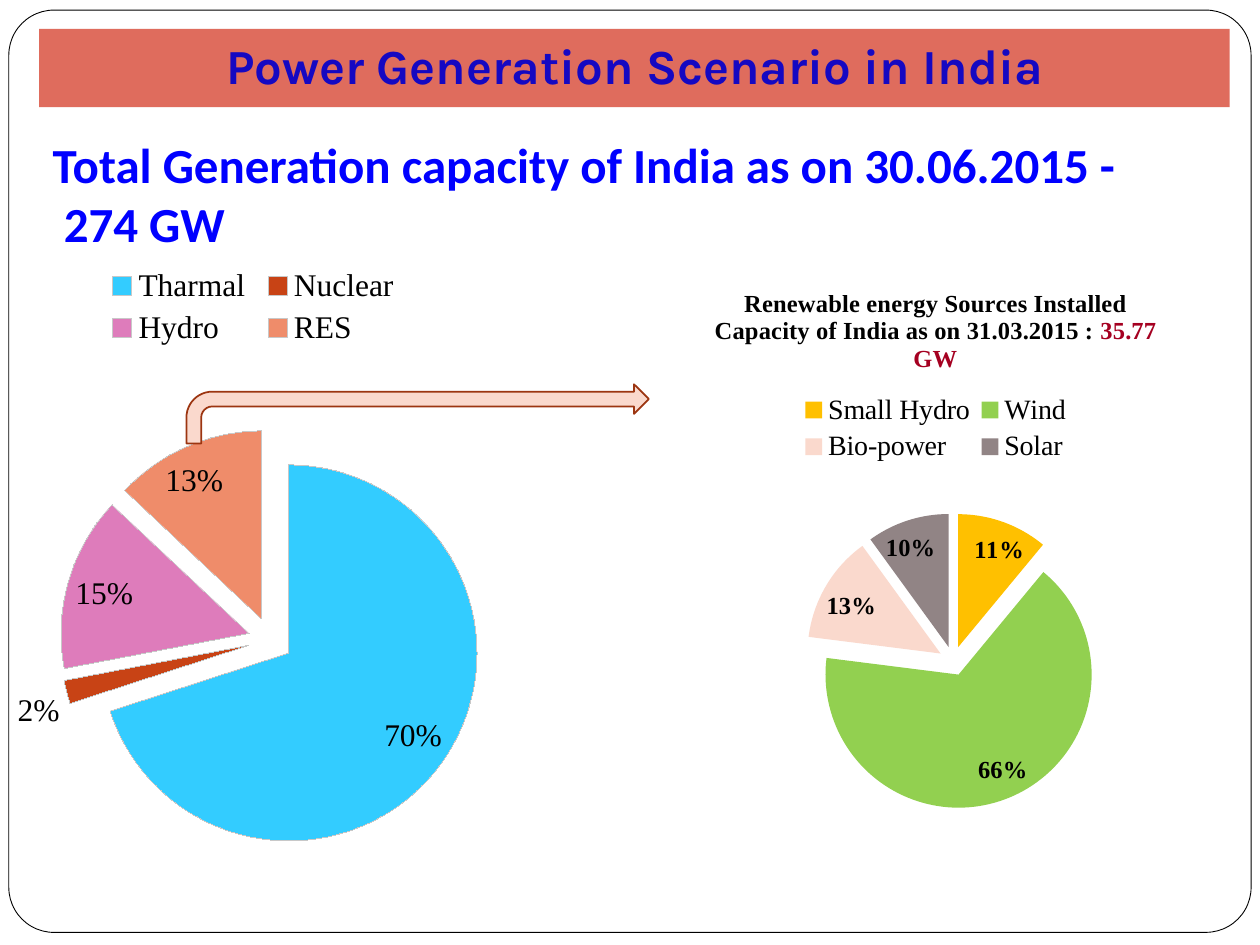
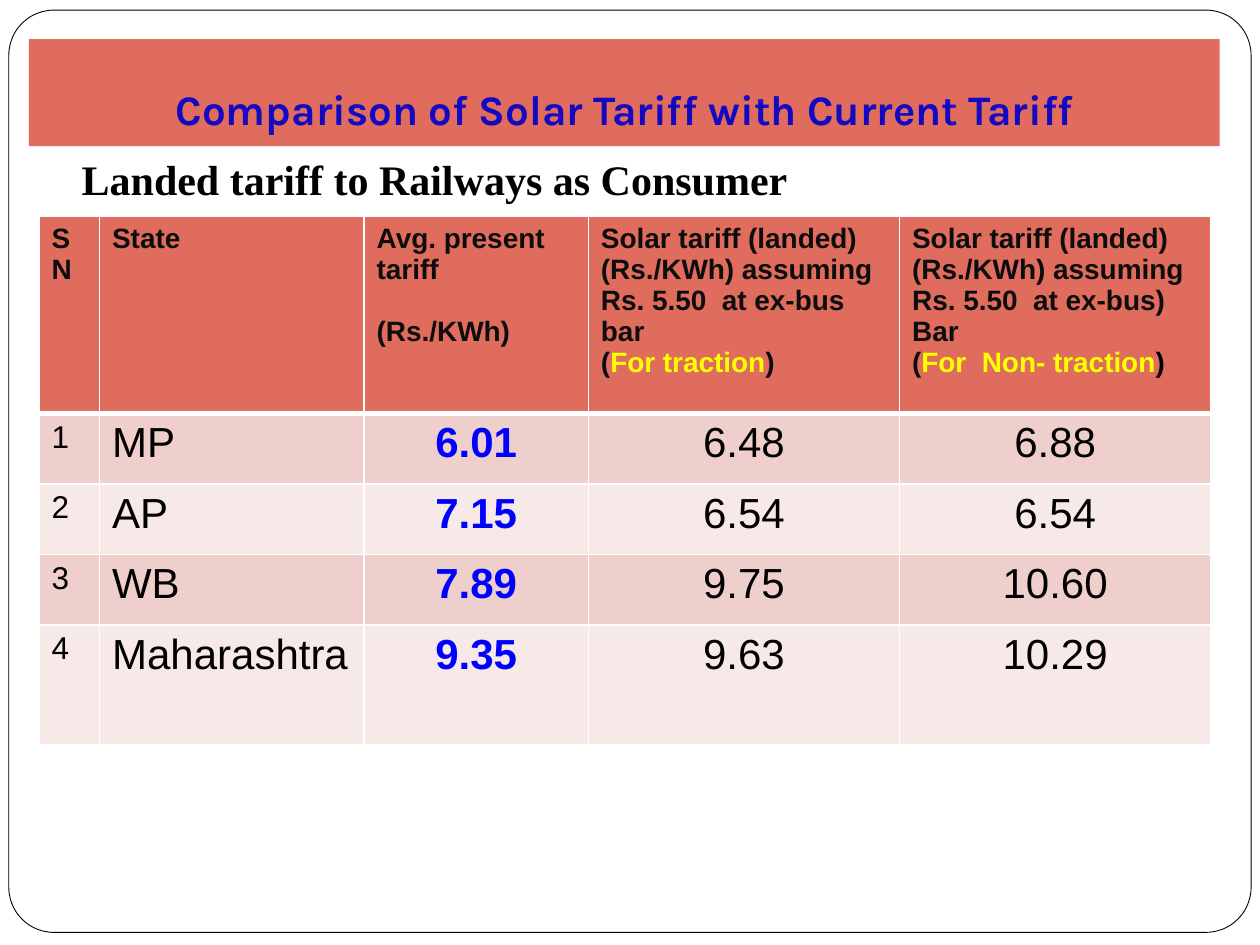
from lxml import etree
from pptx import Presentation
from pptx.chart.data import CategoryChartData
from pptx.dml.color import RGBColor
from pptx.enum.chart import XL_CHART_TYPE, XL_LABEL_POSITION as LABEL, XL_LEGEND_POSITION as LEGEND
from pptx.enum.shapes import MSO_SHAPE as SHAPE
from pptx.enum.text import MSO_ANCHOR as ANCHOR, PP_ALIGN as ALIGN
from pptx.oxml.ns import qn
from pptx.util import Inches, Pt

CORAL, TITLE_BLUE, BLUE = "DF6C5D", "1508C2", "0000FF"
BLACK, WHITE, INK, YELLOW, CRIMSON = "000000", "FFFFFF", "0D0D0D", "FFFF00", "A50021"
ROW_FILLS = ("EFCFCC", "F7E9E8")
SERIF = "Times New Roman"

TARIFF_HEAD = [
    ["SN"],
    ["State"],
    ["Avg. present tariff", "(Rs./KWh)"],
    ["Solar tariff (landed) (Rs./KWh) assuming Rs. 5.50  at ex-bus bar",
     ["(", ("For traction", YELLOW), ")"]],
    ["Solar tariff (landed) (Rs./KWh) assuming Rs. 5.50  at ex-bus)", "Bar",
     ["(", ("For  Non- traction", YELLOW), (")", BLACK)]],
]
TARIFFS = [
    ("1", "MP", "6.01", "6.48", "6.88"),
    ("2", "AP", "7.15", "6.54", "6.54"),
    ("3", "WB", "7.89", "9.75", "10.60"),
    ("4", "Maharashtra", "9.35", "9.63", "10.29"),
]


def rgb(color):
    return RGBColor.from_string(color)


def inches(box):
    return [Inches(length) for length in box]


def set_font(font, size, color=BLACK, name=SERIF, bold=False):
    font.size, font.name, font.bold = Pt(size), name, bold
    font.color.rgb = rgb(color)


def write(frame, paragraphs, size, color=BLACK, name=SERIF, bold=False,
          align=ALIGN.LEFT, before=0, indent=0):
    """Each paragraph is a string or a list of runs; a run may be (text, color)."""
    frame.word_wrap = True
    for number, runs in enumerate(paragraphs):
        paragraph = frame.add_paragraph() if number else frame.paragraphs[0]
        paragraph.alignment = align
        if before:
            paragraph.space_before = Pt(before)
        if indent:
            paragraph._p.get_or_add_pPr().set("marL", str(Inches(indent)))
        for item in [runs] if isinstance(runs, str) else runs:
            words, run_color = (item, color) if isinstance(item, str) else item
            for line_number, line in enumerate(words.split("\n")):
                if line_number:
                    paragraph.add_line_break()
                run = paragraph.add_run()
                run.text = line
                set_font(run.font, size, run_color, name, bold)


def add_text(slide, box, paragraphs, **text_format):
    write(slide.shapes.add_textbox(*inches(box)).text_frame, paragraphs, **text_format)


def add_box(slide, kind, box, fill, line=None, weight=1):
    shape = slide.shapes.add_shape(kind, *inches(box))
    shape.shadow.inherit = False
    shape.fill.solid()
    shape.fill.fore_color.rgb = rgb(fill)
    if line:
        shape.line.color.rgb = rgb(line)
        shape.line.width = Pt(weight)
    else:
        shape.line.fill.background()
    return shape


def add_framed_slide(deck):
    slide = deck.slides.add_slide(deck.slide_layouts[6])
    frame = add_box(slide, SHAPE.ROUNDED_RECTANGLE, (0.07, 0.08, 9.86, 7.32), WHITE, BLACK, 0.5)
    frame.adjustments[0] = 0.049
    return slide


def add_title_band(slide, box, title, size):
    band = add_box(slide, SHAPE.RECTANGLE, box, CORAL)
    frame = band.text_frame
    frame.vertical_anchor = ANCHOR.BOTTOM
    frame.margin_bottom = Inches(0.1)
    write(frame, [title], size=size, color=TITLE_BLUE, name="Karla", bold=True, align=ALIGN.CENTER)


def manual_layout(fractions, inner=False):
    """Chart layout element from x, y, width and height as shares of the chart."""
    layout = etree.Element(qn("c:layout"))
    manual = etree.SubElement(layout, qn("c:manualLayout"))
    settings = [("layoutTarget", "inner")] if inner else []
    settings += [("xMode", "edge"), ("yMode", "edge")]
    settings += zip("xywh", fractions)
    for tag, value in settings:
        etree.SubElement(manual, qn("c:" + tag)).set("val", str(value))
    return layout


def add_pie(slide, box, shares, explosion, plot_area, legend_area, legend_size,
            label_size, bold_labels=False, outline=None, title=None):
    """Shares are (category, percent, color) rows."""
    categories, values, colors = zip(*shares)
    data = CategoryChartData()
    data.categories = categories
    data.add_series("Series 1", values)
    chart = slide.shapes.add_chart(XL_CHART_TYPE.PIE, *inches(box), data).chart
    set_font(chart.font, label_size)

    # Title
    chart.has_title = bool(title)
    if title:
        write(chart.chart_title.text_frame, [title], size=14, bold=True, align=ALIGN.CENTER)

    # Slices
    pie = chart.plots[0]
    pie.vary_by_categories = True
    series = pie.series[0]
    for number, color in enumerate(colors):
        slice_format = series.points[number].format
        slice_format.fill.solid()
        slice_format.fill.fore_color.rgb = rgb(color)
        if outline:
            slice_format.line.color.rgb = rgb(outline)
        else:
            slice_format.line.fill.background()
    burst = etree.Element(qn("c:explosion"))
    burst.set("val", str(explosion))
    series._element.find(qn("c:dPt")).addprevious(burst)

    # Percent labels
    pie.has_data_labels = True
    labels = pie.data_labels
    labels.show_percentage, labels.show_value = True, False
    labels.number_format, labels.number_format_is_linked = "0%", False
    labels.position = LABEL.BEST_FIT
    set_font(labels.font, label_size, bold=bold_labels)

    # Legend and placement
    chart.has_legend = True
    legend = chart.legend
    legend.position, legend.include_in_layout = LEGEND.TOP, False
    set_font(legend.font, legend_size)
    for element in legend._element.findall(qn("c:layout")):
        legend._element.remove(element)
    legend._element.find(qn("c:legendPos")).addnext(manual_layout(legend_area))
    plot = pie._element.getparent()
    for element in plot.findall(qn("c:layout")):
        plot.remove(element)
    plot.insert(0, manual_layout(plot_area, inner=True))


def format_cell(cell, fill, bottom=1):
    for side, weight in (("L", 1), ("R", 1), ("T", 1), ("B", bottom)):
        border = etree.SubElement(cell._tc.get_or_add_tcPr(), qn("a:ln" + side))
        border.set("w", str(Pt(weight)))
        color = etree.SubElement(etree.SubElement(border, qn("a:solidFill")), qn("a:srgbClr"))
        color.set("val", WHITE)
    cell.fill.solid()
    cell.fill.fore_color.rgb = rgb(fill)


def add_tariff_table(slide, left, top):
    widths = (0.48, 2.1, 1.78, 2.47, 2.47)
    heights = (1.56, 0.56, 0.56, 0.56, 0.95)
    box = (left, top, sum(widths), sum(heights))
    table = slide.shapes.add_table(len(heights), len(widths), *inches(box)).table
    for column, width in zip(table.columns, widths):
        column.width = Inches(width)
    for row, height in zip(table.rows, heights):
        row.height = Inches(height)

    # Header
    for column, heading in enumerate(TARIFF_HEAD):
        cell = table.cell(0, column)
        format_cell(cell, CORAL, bottom=3)
        write(cell.text_frame, heading, size=16, color=INK, name="Arial", bold=True)
    table.cell(0, 2).text_frame.paragraphs[1].space_before = Pt(18)

    # One row for each state
    for row, tariffs in enumerate(TARIFFS, 1):
        for column, value in enumerate(tariffs):
            cell = table.cell(row, column)
            format_cell(cell, ROW_FILLS[(row - 1) % 2])
            present = column == 2
            write(cell.text_frame, [value], size=24 if column else 18, name="Arial",
                  color=BLUE if present else BLACK, bold=present,
                  align=ALIGN.CENTER if column > 1 else ALIGN.LEFT)


def build_generation_slide(deck):
    slide = add_framed_slide(deck)
    add_text(slide, (0.23, 1.02, 9.35, 1.03),
             ["Total Generation capacity of India as on 30.06.2015 -\n 274 GW"],
             size=28, color=BLUE, name="Calibri", bold=True, indent=0.09)
    add_title_band(slide, (0.31, 0.23, 9.45, 0.62), "Power Generation Scenario in India", 28)
    add_pie(slide, (0, 2.03, 3.98, 5.08),
            [("Tharmal", 70, "33CCFF"), ("Nuclear", 2, "C84315"),
             ("Hydro", 15, "DE7CBB"), ("RES", 13, "EF8C6A")],
            explosion=12, plot_area=(0.12, 0.27, 0.84, 0.66),
            legend_area=(0.2, 0.01, 0.61, 0.14), legend_size=18, label_size=18,
            outline="C8C8C8")
    add_pie(slide, (5.08, 2.11, 4.69, 4.45),
            [("Small Hydro", 11, "FFC000"), ("Wind", 66, "92D050"),
             ("Bio-power", 13, "FAD9CD"), ("Solar", 10, "918485")],
            explosion=11, plot_area=(0.28, 0.44, 0.5, 0.53),
            legend_area=(0.26, 0.22, 0.48, 0.14), legend_size=16, label_size=14,
            bold_labels=True,
            title=["Renewable energy Sources Installed Capacity of India as on 31.03.2015 : ",
                   ("35.77 GW", CRIMSON)])
    # Arrow from the RES slice to its breakdown
    add_box(slide, SHAPE.BENT_ARROW, (1.48, 3.05, 3.67, 0.47), "FAD9CD", "9C3511")


def build_tariff_slide(deck):
    slide = add_framed_slide(deck)
    add_title_band(slide, (0.23, 0.31, 9.45, 0.85),
                   "Comparison of Solar Tariff with Current Tariff", 24)
    add_text(slide, (0.55, 1.17, 8.95, 6), ["Landed tariff to Railways as Consumer"],
             size=24, bold=True, align=ALIGN.JUSTIFY, before=5.8)
    add_tariff_table(slide, 0.31, 1.72)


def main():
    deck = Presentation()
    deck.slide_width, deck.slide_height = Inches(10), Inches(7.5)
    build_generation_slide(deck)
    build_tariff_slide(deck)
    deck.save("out.pptx")


if __name__ == "__main__":
    main()
